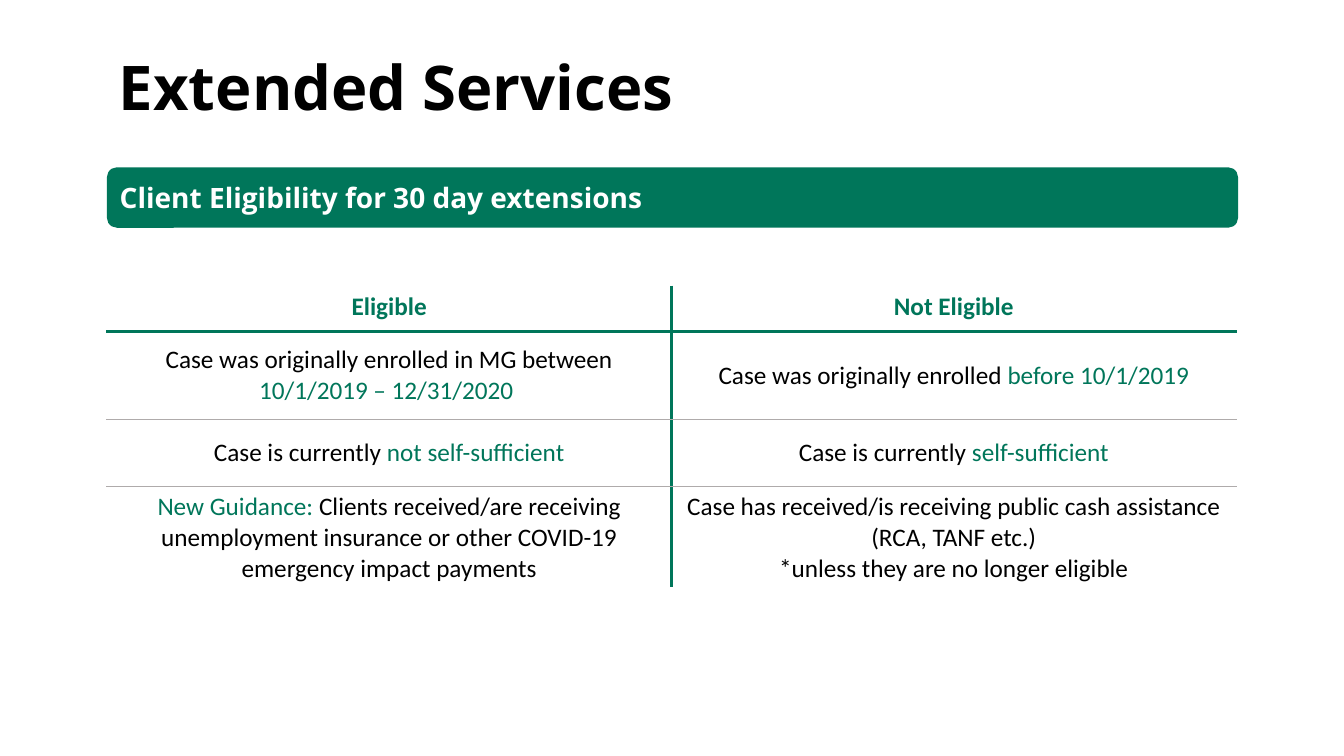
from lxml.etree import SubElement
from pptx import Presentation
from pptx.dml.color import RGBColor
from pptx.enum.shapes import MSO_SHAPE as SHAPE
from pptx.enum.text import MSO_ANCHOR as ANCHOR, PP_ALIGN as ALIGN
from pptx.oxml.ns import qn
from pptx.util import Inches, Pt

GREEN = RGBColor(0x00, 0x76, 0x5A)
GRAY = RGBColor(0xAF, 0xAB, 0xAB)
BLACK = RGBColor(0, 0, 0)
WHITE = RGBColor(0xFF, 0xFF, 0xFF)

HEADERS = ["Eligible", "Not Eligible"]
CRITERIA = [
    [
        [[("Case was originally enrolled in MG between ", BLACK),
          ("10/1/2019 – 12/31/2020 ", GREEN)]],
        [[("Case was originally enrolled ", BLACK), ("before 10/1/2019", GREEN)]],
    ],
    [
        [[("Case is currently ", BLACK), ("not self-sufficient", GREEN)]],
        [[("Case is currently ", BLACK), ("self-sufficient", GREEN)]],
    ],
    [
        [[("New Guidance: ", GREEN),
          ("Clients received/are receiving unemployment insurance or other "
           "COVID-19 emergency impact payments", BLACK)]],
        [[("Case has received/is receiving public cash assistance (RCA, TANF etc.)", BLACK)],
         [("*unless they are no longer eligible", BLACK)]],
    ],
]
ROW_HEIGHTS = [0.45, 0.87, 0.67, 1.0]
COLUMN_WIDTH = 5.6
THICK = (GREEN, 2.25)
THIN = (GRAY, 1)


class SlideBuilder:
    heading_font = "Open Sans"
    body_font = "Calibri"

    def __init__(self, prs):
        self.s = prs.slides.add_slide(prs.slide_layouts[6])

    def paragraph(self, p, runs, font, size, bold=False, align=ALIGN.LEFT):
        p.alignment = align
        p.font.name, p.font.size, p.font.bold = font, Pt(size), bold
        for text, color in runs:
            r = p.add_run()
            r.text = text
            r.font.color.rgb = color

    def title(self, text, x, y, w, h):
        tf = self.s.shapes.add_textbox(Inches(x), Inches(y), Inches(w), Inches(h)).text_frame
        tf.word_wrap = True
        self.paragraph(tf.paragraphs[0], [(text, BLACK)], self.heading_font, 44, True)

    def banner(self, text, x, y, w, h):
        sp = self.s.shapes.add_shape(
            SHAPE.ROUNDED_RECTANGLE, Inches(x), Inches(y), Inches(w), Inches(h))
        sp.shadow.inherit = False
        sp.fill.solid()
        sp.fill.fore_color.rgb = GREEN
        sp.line.fill.background()
        tf = sp.text_frame
        tf.vertical_anchor = ANCHOR.MIDDLE
        self.paragraph(tf.paragraphs[0], [(text, WHITE)], self.heading_font, 20, True)

    def border(self, cell, side, color, width):
        tc_pr = cell._tc.get_or_add_tcPr()
        ln = SubElement(tc_pr, qn(f"a:ln{side}"), w=str(Pt(width)))
        fill = SubElement(ln, qn("a:solidFill"))
        SubElement(fill, qn("a:srgbClr"), val=str(color))

    def cell(self, cell, paragraphs, borders, bold):
        for side in "LRTB":
            if side in borders:
                self.border(cell, side, *borders[side])
        cell.fill.background()
        cell.vertical_anchor = ANCHOR.TOP if bold else ANCHOR.MIDDLE
        tf = cell.text_frame
        for i, runs in enumerate(paragraphs):
            p = tf.add_paragraph() if i else tf.paragraphs[0]
            self.paragraph(p, runs, self.body_font, 18, bold, ALIGN.CENTER)

    def table(self, rows, x, y):
        n_cols = len(rows[0])
        table = self.s.shapes.add_table(
            len(rows), n_cols, Inches(x), Inches(y),
            Inches(COLUMN_WIDTH * n_cols), Inches(sum(ROW_HEIGHTS))).table
        table.first_row = table.horz_banding = False
        for column in table.columns:
            column.width = Inches(COLUMN_WIDTH)
        rules = [THICK] + [THIN] * (len(rows) - 2)
        for i, row in enumerate(rows):
            table.rows[i].height = Inches(ROW_HEIGHTS[i])
            for j, paragraphs in enumerate(row):
                borders = {"L" if j else "R": THICK}
                if i > 0:
                    borders["T"] = rules[i - 1]
                if i < len(rules):
                    borders["B"] = rules[i]
                self.cell(table.cell(i, j), paragraphs, borders, bold=i == 0)


def main():
    prs = Presentation()
    prs.slide_width, prs.slide_height = Inches(13.33), Inches(7.5)
    slide = SlideBuilder(prs)
    slide.banner("Client Eligibility for 30 day extensions", 1.06, 1.66, 11.22, 0.6)
    slide.title("Extended Services", 1.08, 0.44, 10.58, 0.84)
    header_row = [[[(text, GREEN)]] for text in HEADERS]
    slide.table([header_row] + CRITERIA, 1.06, 2.84)
    prs.save("out.pptx")


if __name__ == "__main__":
    main()
